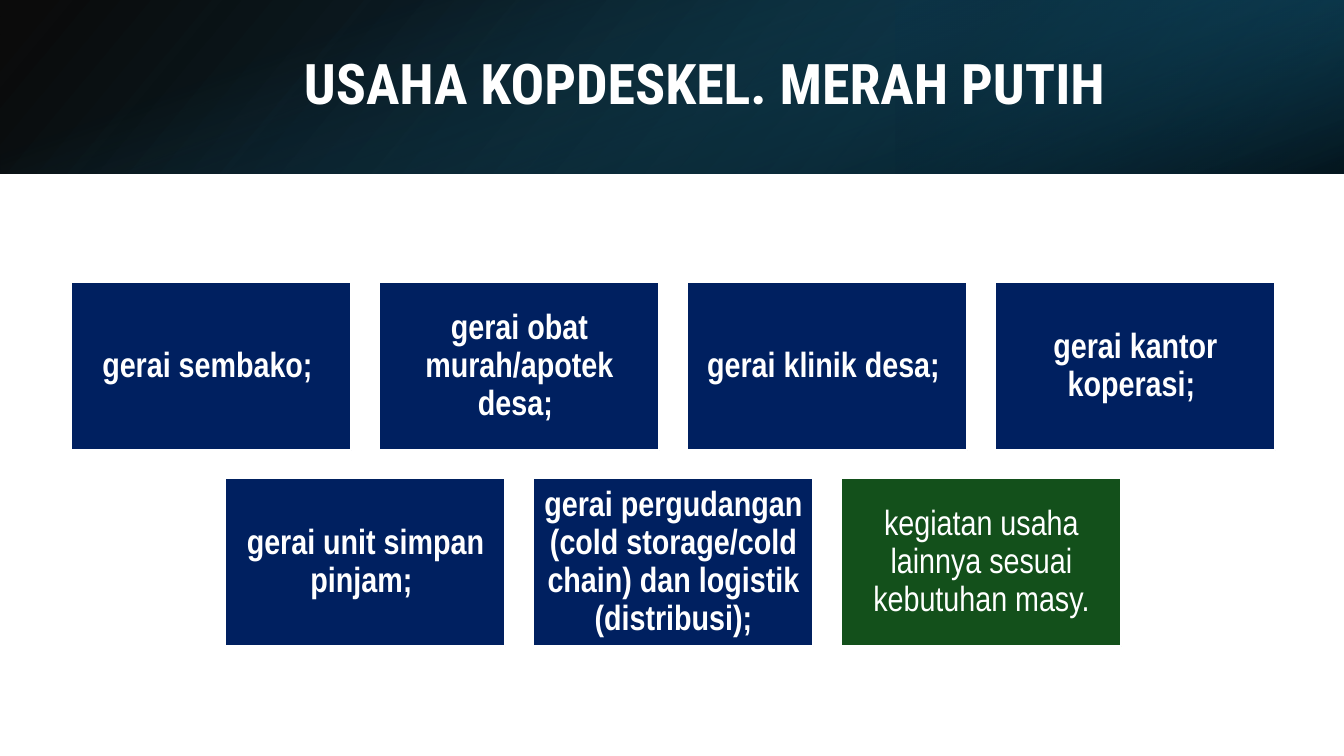
from lxml import etree
from pptx import Presentation
from pptx.dml.color import RGBColor as RGB
from pptx.enum.shapes import MSO_SHAPE as SHAPE
from pptx.enum.text import MSO_ANCHOR as ANCHOR, PP_ALIGN as ALIGN
from pptx.oxml.ns import qn
from pptx.util import Pt

COLORS = {
    "white": "FFFFFF",
    "black": "000000",
    "navy": "002060",
    "green": "13501B",
    "teal": "156082",
    "deep_teal": "104862",
    "night": "0B3041",
}
SLIDE_W, SLIDE_H, HEADER_H = 960, 540, 124
CARD_W, CARD_H, GAP = 200, 120, 20
CARDS_CENTER, CARDS_TOP = 481, 201.5
ROWS = [
    ["gerai sembako; ", "gerai obat murah/apotek desa; ",
     "gerai klinik desa; ", "gerai kantor koperasi; "],
    ["gerai unit simpan pinjam; ",
     "gerai pergudangan (cold storage/cold chain) dan logistik (distribusi);",
     "kegiatan usaha lainnya sesuai kebutuhan masy."],
]


def color(name):
    """Return the named palette colour."""
    return RGB.from_string(COLORS[name])


def add_rect(s, x, y, w, h):
    """Add a rectangle without shadow."""
    sp = s.shapes.add_shape(SHAPE.RECTANGLE, Pt(x), Pt(y), Pt(w), Pt(h))
    sp.shadow.inherit = False
    return sp


def write(sp, text, font="Arial Narrow", size=25, bold=True, inset=7.2):
    """Write one centred white paragraph into a shape."""
    tf = sp.text_frame
    tf.word_wrap = True
    tf.vertical_anchor = ANCHOR.MIDDLE
    tf.margin_left = tf.margin_right = Pt(7.2)
    tf.margin_top = tf.margin_bottom = Pt(inset)
    p = tf.paragraphs[0]
    p.alignment = ALIGN.CENTER
    p.line_spacing = 0.9
    r = p.add_run()
    r.text = text
    r.font.name = font
    r.font.size = Pt(size)
    r.font.bold = bold
    r.font.color.rgb = color("white")


def add_gradient(s, box, stops, angle, rotation=0, flip=False):
    """Add a rectangle filled with a translucent linear gradient."""
    sp = add_rect(s, *box)
    sp.line.fill.background()
    sp.rotation = rotation
    props = sp.element.spPr
    if flip:
        props.find(qn("a:xfrm")).set("flipH", "1")
    grad = etree.Element(qn("a:gradFill"), rotWithShape="1")
    stop_list = etree.SubElement(grad, qn("a:gsLst"))
    for pos, name, alpha in stops:
        gs = etree.SubElement(stop_list, qn("a:gs"), pos=str(pos * 1000))
        clr = etree.SubElement(gs, qn("a:srgbClr"), val=COLORS[name])
        etree.SubElement(clr, qn("a:alpha"), val=str(alpha * 1000))
    etree.SubElement(grad, qn("a:lin"), ang=str(angle * 60000), scaled="0")
    props.find(qn("a:prstGeom")).addnext(grad)


def add_header(s):
    """Add the layered gradient band and the title."""
    add_gradient(s, (0, 0, SLIDE_W, HEADER_H),
                 [(0, "black", 96), (100, "deep_teal", 100)], 140, flip=True)
    add_gradient(s, (640, 0, 320, HEADER_H),
                 [(19, "night", 68), (100, "teal", 79)], 320, 180, True)
    offset = (SLIDE_W - HEADER_H) / 2
    add_gradient(s, (offset, -offset, HEADER_H, SLIDE_W),
                 [(23, "teal", 0), (99, "black", 74)], 340, 90)
    title = s.shapes.add_textbox(Pt(108), Pt(27), Pt(790.5), Pt(69))
    write(title, "USAHA KOPDESKEL. MERAH PUTIH",
          font="Roboto Condensed", size=40, inset=3.6)


def add_card(s, x, y, text, fill="navy", bold=True):
    """Add one business unit card."""
    sp = add_rect(s, x, y, CARD_W, CARD_H)
    sp.fill.solid()
    sp.fill.fore_color.rgb = color(fill)
    sp.line.color.rgb = color("white")
    sp.line.width = Pt(1.5)
    write(sp, text, bold=bold)


def add_cards(s):
    """Lay out the cards in centred rows, the last one in green."""
    for i, row in enumerate(ROWS):
        left = CARDS_CENTER - (len(row) * (CARD_W + GAP) - GAP) / 2
        y = CARDS_TOP + i * (CARD_H + GAP)
        for j, text in enumerate(row):
            is_last = text == ROWS[-1][-1]
            add_card(s, left + j * (CARD_W + GAP), y, text,
                     fill="green" if is_last else "navy", bold=not is_last)


def main():
    """Build and save the slide."""
    prs = Presentation()
    prs.slide_width, prs.slide_height = Pt(SLIDE_W), Pt(SLIDE_H)
    s = prs.slides.add_slide(prs.slide_layouts[6])
    add_header(s)
    add_cards(s)
    prs.save("out.pptx")


if __name__ == "__main__":
    main()
